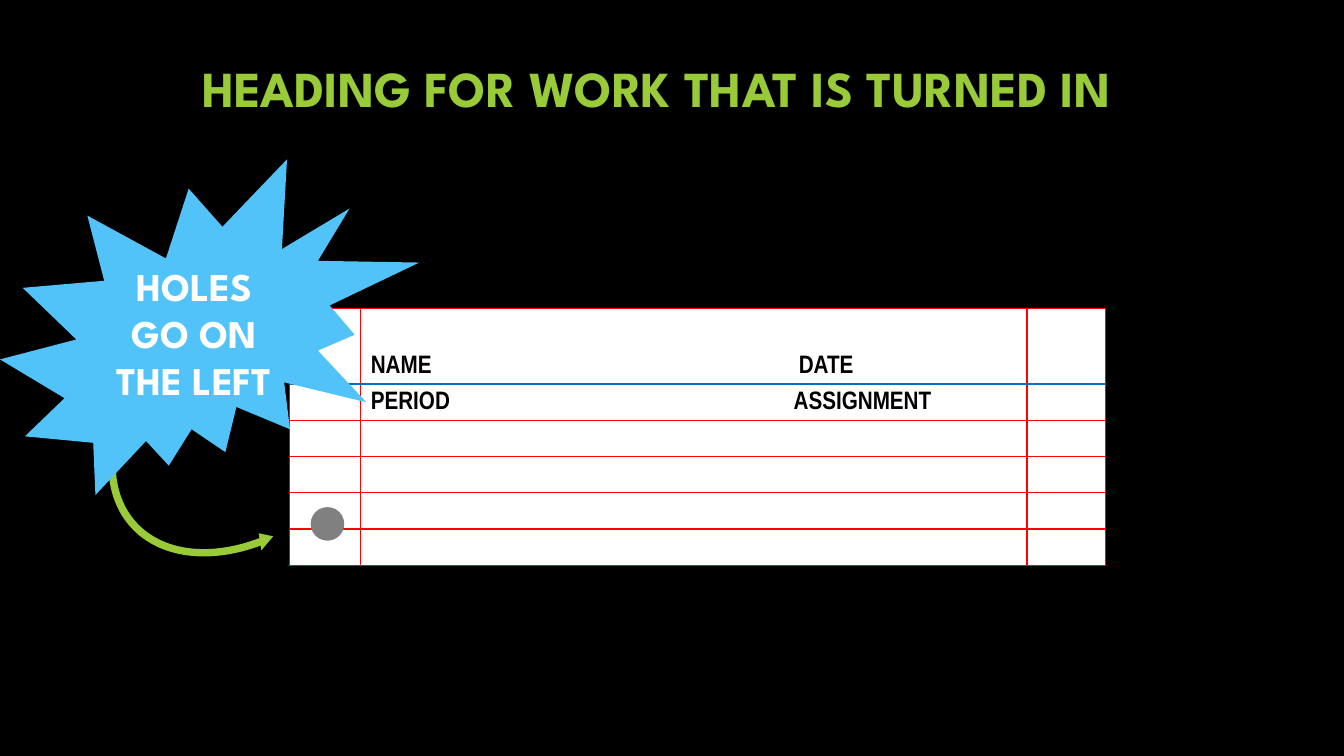
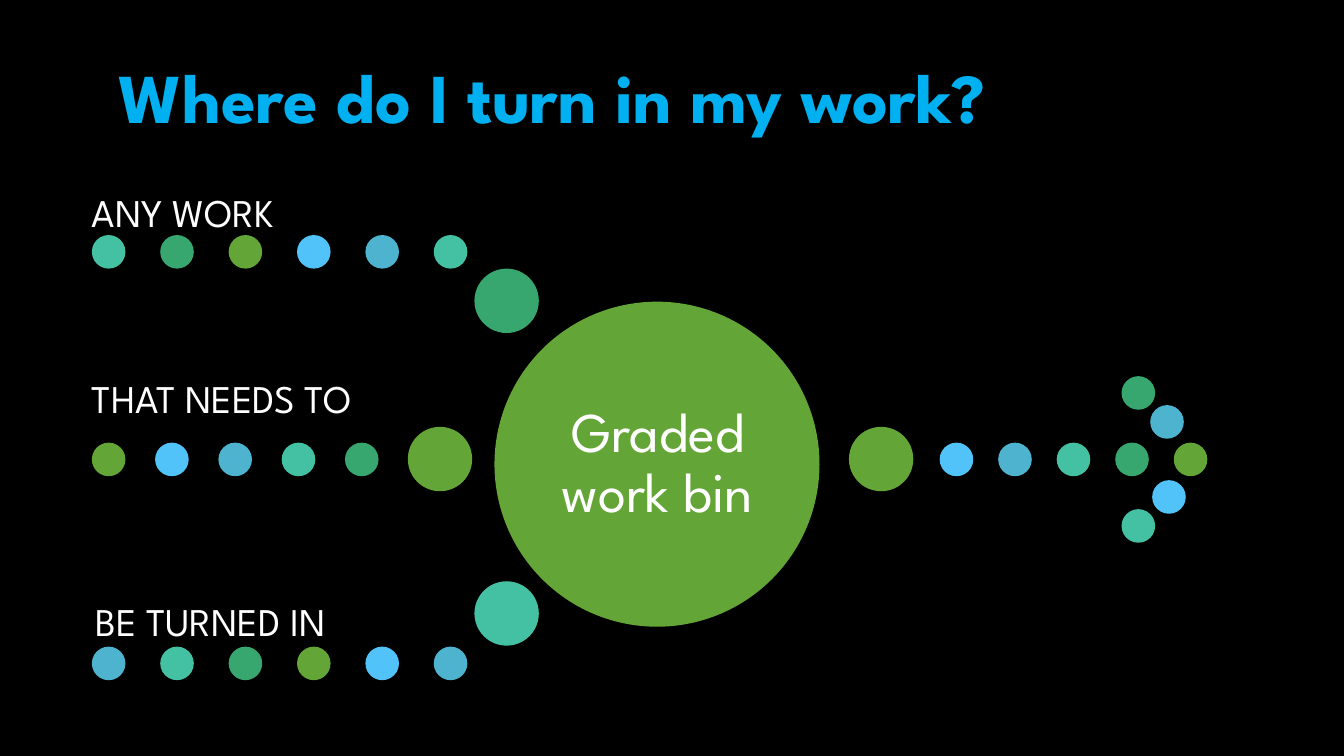
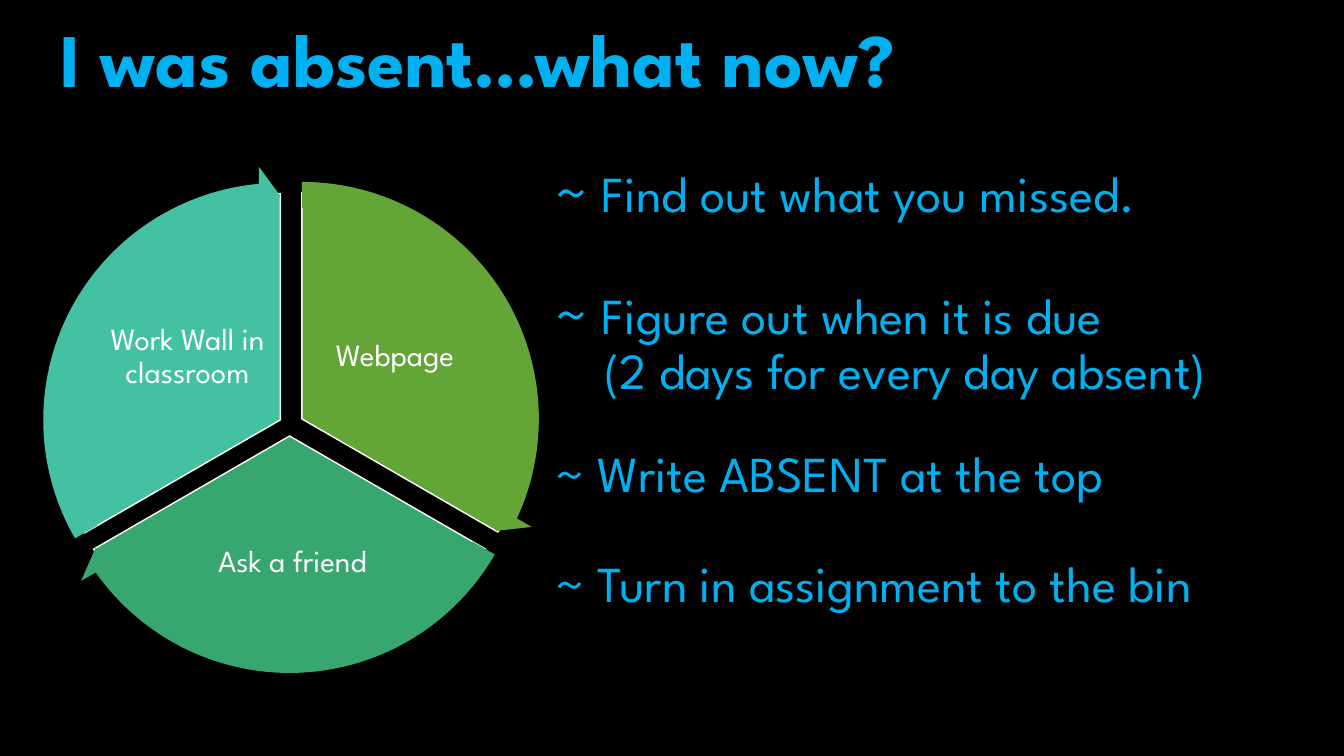
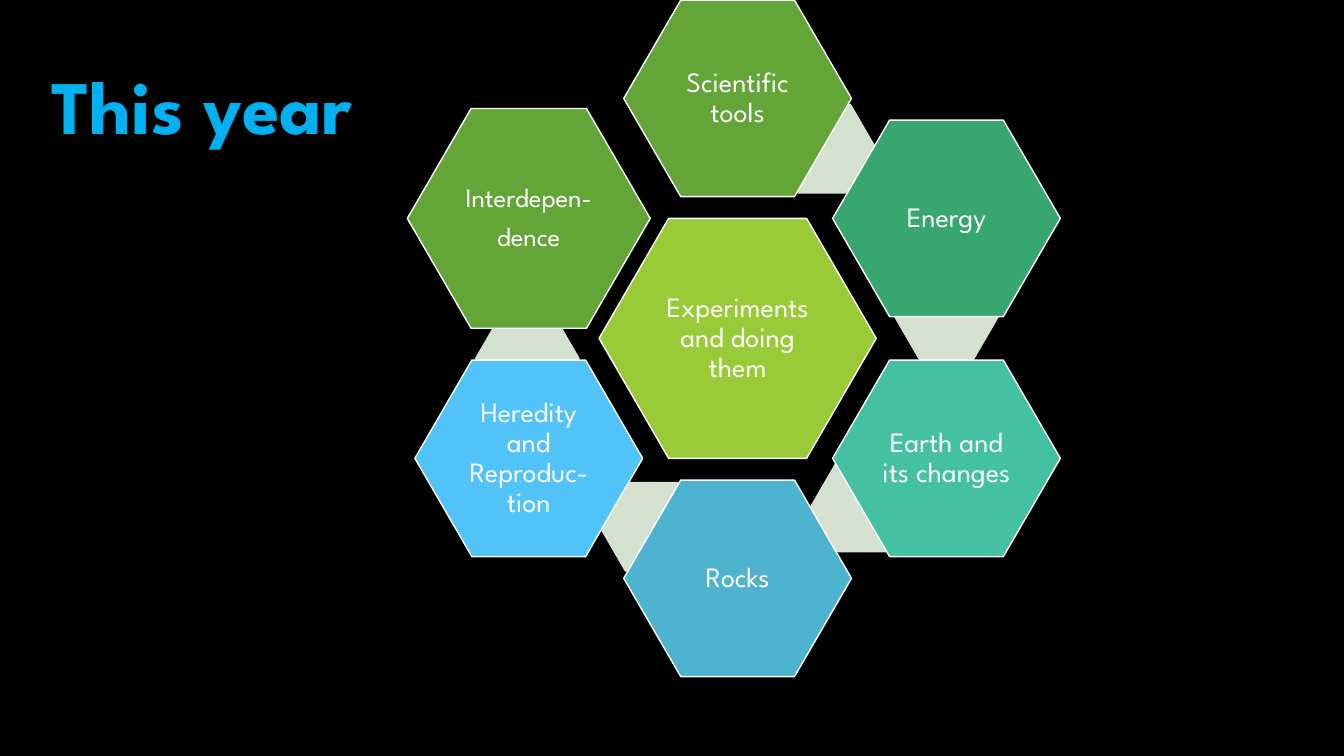
from itertools import cycle, islice

from lxml import etree
from pptx import Presentation
from pptx.dml.color import RGBColor
from pptx.enum import shapes, text
from pptx.oxml import ns
from pptx.util import Pt

BLACK = RGBColor(0x00, 0x00, 0x00)
WHITE = RGBColor(0xFF, 0xFF, 0xFF)
GRAY = RGBColor(0x80, 0x80, 0x80)
RED = RGBColor(0xFF, 0x00, 0x00)
RULE_BLUE = RGBColor(0x00, 0x70, 0xC0)
TITLE_BLUE = RGBColor(0x00, 0xB0, 0xF0)
LIME = RGBColor(0x99, 0xCB, 0x38)
LEAF = RGBColor(0x63, 0xA5, 0x37)
GREEN = RGBColor(0x37, 0xA7, 0x6F)
TEAL = RGBColor(0x44, 0xC1, 0xA3)
CYAN = RGBColor(0x4E, 0xB3, 0xCF)
SKY = RGBColor(0x51, 0xC3, 0xF9)
PALE = RGBColor(0xD3, 0xE1, 0xCE)
DOT_COLORS = [TEAL, GREEN, LEAF, SKY, CYAN]

SPARTAN = "League Spartan"
NARROW = "Arial Narrow"
PRESET = shapes.MSO_SHAPE
ALIGN = text.PP_ALIGN
ANCHOR = text.MSO_ANCHOR
DOT = 23
BIG_DOT = 45


def add_slide(presentation):
    slide = presentation.slides.add_slide(presentation.slide_layouts[6])
    slide.background.fill.solid()
    slide.background.fill.fore_color.rgb = BLACK
    return slide


def write(paragraph, words, size, color=WHITE, bold=False, font=SPARTAN,
          align=ALIGN.LEFT, line=0.9, before=0, after=0):
    paragraph.alignment = align
    paragraph.line_spacing = line
    paragraph.space_before = Pt(before)
    paragraph.space_after = Pt(after)
    run = paragraph.add_run()
    run.text = words
    run.font.size = Pt(size)
    run.font.name = font
    run.font.bold = bold
    run.font.color.rgb = color


def add_frame(slide, left, top, width, height, anchor=ANCHOR.TOP, inset=None):
    frame = slide.shapes.add_textbox(Pt(left), Pt(top), Pt(width), Pt(height)).text_frame
    frame.word_wrap = True
    frame.vertical_anchor = anchor
    if inset is not None:
        frame.margin_left = frame.margin_right = Pt(inset)
        frame.margin_top = frame.margin_bottom = Pt(inset)
    return frame


def add_title(slide, left, top, width, words, size, color=TITLE_BLUE):
    frame = add_frame(slide, left, top, width, 72)
    write(frame.paragraphs[0], words, size, color, bold=True)


def add_label(slide, left, top, width, height, words, size, inset=2, after=0):
    frame = add_frame(slide, left, top, width, height, ANCHOR.MIDDLE, inset)
    for index, part in enumerate(words.split("\n")):
        paragraph = frame.add_paragraph() if index else frame.paragraphs[0]
        write(paragraph, part, size, align=ALIGN.CENTER, after=after)


def add_shape(slide, preset, left, top, width, height, fill, line=None, adjustments=()):
    shape = slide.shapes.add_shape(preset, Pt(left), Pt(top), Pt(width), Pt(height))
    shape.shadow.inherit = False
    shape.fill.solid()
    shape.fill.fore_color.rgb = fill
    if line is None:
        shape.line.fill.background()
    else:
        shape.line.color.rgb = line
        shape.line.width = Pt(1)
    for index, value in enumerate(adjustments):
        shape.adjustments[index] = value
    return shape


def add_circle(slide, left, top, size, color):
    add_shape(slide, PRESET.OVAL, left, top, size, size, color, color)


def add_dots(slide, left, top, gap, count, first):
    for index, color in enumerate(islice(cycle(DOT_COLORS), first, first + count)):
        add_circle(slide, left + index * gap, top, DOT, color)


def add_hexagon(slide, center_x, center_y, width, height, fill, line=None):
    add_shape(slide, PRESET.HEXAGON, center_x - width / 2, center_y - height / 2,
              width, height, fill, line, [0.29])


def add_topic(slide, center_x, center_y, width, height, fill, words, size=20, after=0):
    add_hexagon(slide, center_x, center_y, width, height, fill, WHITE)
    add_label(slide, center_x - width / 3, center_y - height / 3,
              width * 2 / 3, height * 2 / 3, words, size, after=after)


def add_tab(paragraph, position):
    properties = paragraph._p.get_or_add_pPr()
    tabs = etree.SubElement(properties, ns.qn("a:tabLst"))
    etree.SubElement(tabs, ns.qn("a:tab"), pos=str(Pt(position)), algn="l")


def set_borders(cell, **colors):
    properties = cell._tc.get_or_add_tcPr()
    for side in "LRTB":
        border = etree.SubElement(properties, ns.qn("a:ln" + side), w=str(Pt(1)))
        fill = etree.SubElement(border, ns.qn("a:solidFill"))
        etree.SubElement(fill, ns.qn("a:srgbClr"), val=str(colors.get(side, RED)))


def add_notebook_paper(slide):
    widths = [51.1, 475.9, 56.2]
    heights = [54] + [25.9] * 5
    frame = slide.shapes.add_table(len(heights), len(widths), Pt(206.6), Pt(220.3),
                                   Pt(sum(widths)), Pt(sum(heights)))
    table = frame.table
    table.first_row = table.horz_banding = False
    for column, width in zip(table.columns, widths):
        column.width = Pt(width)
    for row, height in zip(table.rows, heights):
        row.height = Pt(height)
    blue_sides = {0: {"B": RULE_BLUE}, 1: {"T": RULE_BLUE}}
    for index, row in enumerate(table.rows):
        for cell in row.cells:
            set_borders(cell, **blue_sides.get(index, {}))
            cell.fill.solid()
            cell.fill.fore_color.rgb = WHITE
            cell.margin_top = 0
            cell.margin_bottom = Pt(3.6)
            cell.vertical_anchor = ANCHOR.BOTTOM
    for index, (words, tab) in enumerate([("NAME\tDATE", 305.7),
                                          ("PERIOD\tASSIGNMENT", 302)]):
        paragraph = table.cell(index, 1).text_frame.paragraphs[0]
        write(paragraph, words, 18, BLACK, bold=True, font=NARROW, line=1.0)
        add_tab(paragraph, tab)


def build_heading(presentation):
    slide = add_slide(presentation)
    add_notebook_paper(slide)
    add_shape(slide, PRESET.OVAL, 221.9, 362.2, 24, 24, GRAY)
    arrow = add_shape(slide, PRESET.LEFT_CIRCULAR_ARROW, 95.8, 173.5, 172.8, 246.2, LIME,
                      adjustments=[0.031, 3.768, 23.787, 92.508, 0.036])
    arrow.rotation = 48.1
    burst = add_shape(slide, PRESET.EXPLOSION2, 0, 113.8, 299.5, 239.8, SKY)
    burst.text_frame.word_wrap = True
    burst.text_frame.vertical_anchor = ANCHOR.MIDDLE
    write(burst.text_frame.paragraphs[0], "HOLES GO ON THE LEFT", 28,
          bold=True, align=ALIGN.CENTER, line=1.0)
    frame = add_frame(slide, 137.5, 37.4, 700.6, 51)
    write(frame.paragraphs[0], "HEADING FOR WORK THAT IS TURNED IN", 36, LIME,
          bold=True, line=1.0)


def build_work_bin(presentation):
    slide = add_slide(presentation)
    add_dots(slide, 66.1, 168.4, 48.85, 6, 0)
    add_dots(slide, 66.1, 316.7, 45.2, 5, 2)
    add_dots(slide, 66.1, 462.4, 48.85, 6, 4)
    add_dots(slide, 671.7, 316.7, 41.8, 5, 3)
    for left, top, color in [(801.6, 269.2, GREEN), (822.1, 289.9, CYAN),
                             (823.5, 343.5, SKY), (801.6, 364.2, TEAL)]:
        add_circle(slide, left, top, DOT, color)
    for left, top, color in [(339.4, 192.4, GREEN), (291.8, 305.4, LEAF),
                             (339.4, 415.7, TEAL), (606.9, 305.4, LEAF)]:
        add_circle(slide, left, top, BIG_DOT, color)
    add_circle(slide, 353.7, 216, 231.2, LEAF)
    add_label(slide, 388, 250, 163.4, 163.4, "Graded work bin", 40, inset=4.3)
    for left, top, words in [(65.7, 109.4, "ANY WORK"), (65.7, 242.6, "THAT NEEDS TO"),
                             (68.2, 401.8, "BE TURNED IN")]:
        frame = add_frame(slide, left, top, 207, 59, ANCHOR.BOTTOM, 0)
        write(frame.paragraphs[0], words, 28)
    add_title(slide, 77.8, 41.8, 720, "Where do I turn in my work?", 50)


def build_absent(presentation):
    slide = add_slide(presentation)
    pie_size, overhang = 323.3, 19.8
    slices = [
        (54, 137.6, LEAF, [162, 18], [14.725, 161.994],
         (224.6, 206.6, 115.2, 96.5), "Webpage"),
        (45.2, 149.8, GREEN, [18, 90], [86.72, 18.005],
         (122.4, 359.3, 172.8, 85), "Ask a friend"),
        (38.6, 138.3, TEAL, [90, 162], [158.73, 90],
         (76.3, 206.6, 115.2, 96.5), "Work Wall in classroom"),
    ]
    for left, top, color, angles, _, label_box, words in slices:
        add_shape(slide, PRESET.PIE, left, top, pie_size, pie_size, color, WHITE, angles)
        add_label(slide, *label_box, words, 22)
    arrow_size = pie_size + 2 * overhang
    for left, top, color, _, angles, _, _ in slices:
        add_shape(slide, PRESET.CIRCULAR_ARROW, left - overhang, top - overhang,
                  arrow_size, arrow_size, color,
                  adjustments=[0.051, 3.275, *angles, 0.059])
    add_title(slide, 36, 12.2, 720, "I was absent…what now?", 54)

    frame = add_frame(slide, 389.5, 113.8, 569.5, 342.7)
    steps = [
        (40, "Find out what you missed.", 0),
        (40, "Figure out when it is due", 43.6),
        (None, "(2 days for every day absent)", 0),
        (36, "Write ABSENT at the top", 34.8),
        (36, "Turn in assignment to the bin", 39.2),
    ]
    for index, (tilde_size, words, before) in enumerate(steps):
        paragraph = frame.add_paragraph() if index else frame.paragraphs[0]
        if tilde_size:
            write(paragraph, "~ ", tilde_size, TITLE_BLUE, before=before)
        else:
            paragraph._p.get_or_add_pPr().set("marL", str(Pt(35)))
        write(paragraph, words, 36, TITLE_BLUE, before=before)


def build_this_year(presentation):
    slide = add_slide(presentation)
    add_title(slide, 29.5, 46.1, 720, "This year", 54)
    center_x, center_y = 526.9, 241.7
    column, row = 149.2, 85.7
    for offset_x, offset_y in [(62, -135.5), (149.2, -15.3), (88.8, 120.8),
                               (-61.6, 134.5), (-150.2, 14.3)]:
        add_hexagon(slide, center_x + offset_x, center_y + offset_y, 74.9, 64.1, PALE)
    add_topic(slide, center_x, center_y, 198, 171.4, LIME, "Experiments and doing them")
    for columns, rows, color, words in [
        (0, -2, LEAF, "Scientific tools"),
        (1, -1, GREEN, "Energy"),
        (1, 1, TEAL, "Earth and its changes"),
        (0, 2, CYAN, "Rocks"),
        (-1, 1, SKY, "Heredity and Reproduc-tion"),
    ]:
        add_topic(slide, center_x + columns * column, center_y + rows * row,
                  162.7, 140.4, color, words)
    add_topic(slide, center_x - column, center_y - row, 173.5, 157, LEAF,
              "Interdepen-\ndence", size=19, after=6.65)


def main():
    presentation = Presentation()
    presentation.slide_width = Pt(960)
    presentation.slide_height = Pt(540)
    build_heading(presentation)
    build_work_bin(presentation)
    build_absent(presentation)
    build_this_year(presentation)
    presentation.save("out.pptx")


if __name__ == "__main__":
    main()
